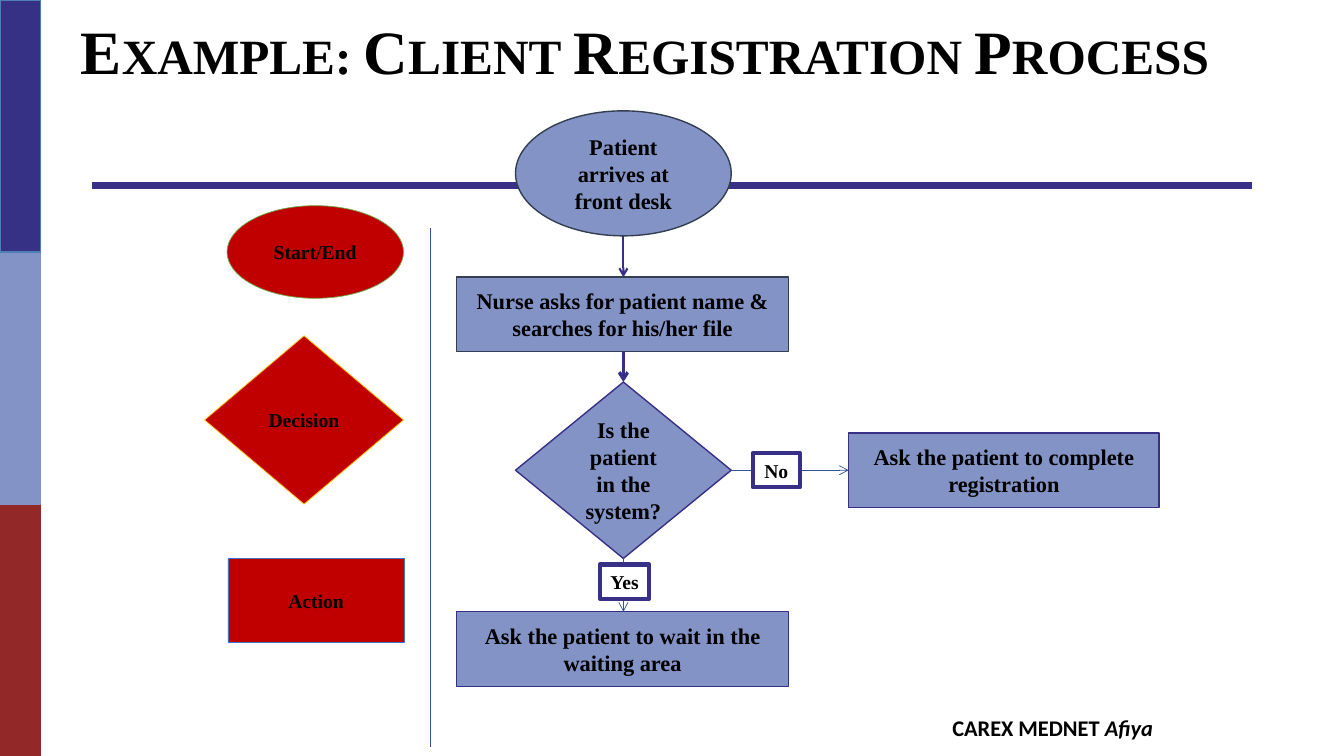
from collections import namedtuple
from dataclasses import dataclass

import pptx
import pptx.dml.color
import pptx.enum.shapes
import pptx.enum.text
import pptx.oxml
import pptx.oxml.ns
import pptx.util

Pt = pptx.util.Pt
Shape = pptx.enum.shapes.MSO_SHAPE
Align = pptx.enum.text.PP_ALIGN
Anchor = pptx.enum.text.MSO_ANCHOR
Box = namedtuple("Box", "left top width height")


@dataclass(frozen=True)
class Theme:
    serif: str = "Times New Roman"
    sans: str = "Calibri"
    title_size: int = 44
    step_size: int = 16
    label_size: int = 14
    text: str = "000000"
    paper: str = "FFFFFF"
    indigo: str = "383087"
    band_indigo: str = "373185"
    band_edge: str = "4E7FB4"
    periwinkle: str = "8393C5"
    brick: str = "932828"
    red: str = "C00000"
    slate: str = "333F50"
    blue: str = "2F5597"
    green: str = "70AD47"
    gold: str = "FFC000"
    azure: str = "4472C4"


THEME = Theme()


def rgb(value):
    return pptx.dml.color.RGBColor.from_string(value)


def style_font(font, size, name=THEME.serif):
    font.name = name
    font.size = Pt(size)
    font.bold = True
    font.color.rgb = rgb(THEME.text)


def add_block(slide, kind, box, fill, edge, weight, text="", size=THEME.step_size):
    block = slide.shapes.add_shape(kind, *map(Pt, box))
    block.shadow.inherit = False
    block.fill.solid()
    block.fill.fore_color.rgb = rgb(fill)
    block.line.color.rgb = rgb(edge)
    block.line.width = Pt(weight)
    if text:
        frame = block.text_frame
        frame.word_wrap = True
        frame.vertical_anchor = Anchor.MIDDLE
        paragraph = frame.paragraphs[0]
        paragraph.text = text
        paragraph.alignment = Align.CENTER
        style_font(paragraph.font, size)
    return block


def add_line(slide, start, end, color, weight, arrow=False):
    line = slide.shapes.add_connector(
        pptx.enum.shapes.MSO_CONNECTOR.STRAIGHT, *map(Pt, (*start, *end)))
    line.line.color.rgb = rgb(color)
    line.line.width = Pt(weight)
    properties = line._element.spPr
    if arrow:
        tail = pptx.oxml.parse_xml(
            f'<a:tailEnd {pptx.oxml.ns.nsdecls("a")} type="arrow"/>')
        properties.find(pptx.oxml.ns.qn("a:ln")).append(tail)
    properties.append(pptx.oxml.parse_xml(
        f'<a:effectLst {pptx.oxml.ns.nsdecls("a")}/>'))


def side_band(slide, box):
    height = box.height / 3
    bands = [(THEME.band_indigo, THEME.band_edge),
             (THEME.periwinkle, THEME.periwinkle),
             (THEME.brick, THEME.brick)]
    for index, (fill, edge) in reversed(list(enumerate(bands))):
        band = Box(box.left, box.top + index * height, box.width, height)
        add_block(slide, Shape.RECTANGLE, band, fill, edge, 1)


def heading(slide, box):
    title = slide.shapes.title
    title.left, title.top, title.width, title.height = map(Pt, box)
    frame = title.text_frame
    frame.word_wrap = True
    frame.auto_size = pptx.enum.text.MSO_AUTO_SIZE.NONE
    frame.vertical_anchor = Anchor.MIDDLE
    paragraph = frame.paragraphs[0]
    paragraph.text = "Example: Client Registration Process"
    paragraph.alignment = Align.LEFT
    paragraph.line_spacing = 0.9
    style_font(paragraph.font, THEME.title_size)
    paragraph.font._element.set("cap", "small")
    rule_y = box.top + 133.2
    add_line(slide, (box.left + 15, rule_y), (box.left + 844, rule_y),
             THEME.indigo, 4.5)


def footer(slide, box):
    frame = slide.shapes.add_textbox(*map(Pt, box)).text_frame
    frame.word_wrap = True
    paragraph = frame.paragraphs[0]
    style_font(paragraph.font, THEME.step_size, THEME.sans)
    paragraph.add_run().text = "CAREX MEDNET "
    program = paragraph.add_run()
    program.text = "Afiya"
    program.font.italic = True


def legend(slide, box):
    symbols = [("Start/End", Shape.OVAL, 16, 0, 126, 66.2, THEME.green),
               ("Decision", Shape.DIAMOND, 0, 93, 142, 120.2, THEME.gold),
               ("Action", Shape.RECTANGLE, 16.6, 252, 126, 59.8, THEME.azure)]
    for text, kind, dx, dy, width, height, edge in symbols:
        symbol = Box(box.left + dx, box.top + dy, width, height)
        add_block(slide, kind, symbol, THEME.red, edge, 0.5, text, THEME.label_size)
    divider_x = box.left + box.width
    add_line(slide, (divider_x, box.top + 15.8),
             (divider_x, box.top + box.height), THEME.blue, 1)


def answer(slide, box, text):
    tag = add_block(slide, Shape.RECTANGLE, box, THEME.paper, THEME.indigo, 3,
                    text, THEME.label_size)
    tag.text_frame.word_wrap = False


def flow(slide, box):
    step_width, step_height = 237, 53.3
    node_width = 154.1
    axis = box.left + step_width / 2 + 0.6
    node_left = axis - node_width / 2

    arrival = Box(node_left, box.top, node_width, 89.3)
    search = Box(box.left, box.top + 118.8, step_width, step_height)
    question = Box(node_left, box.top + 193.7, node_width, 126)
    middle = question.top + question.height / 2
    register = Box(box.left + box.width - 221.8, middle - step_height / 2,
                   221.8, step_height)
    wait = Box(box.left, box.top + box.height - step_height, step_width, step_height)

    steps = [
        (Shape.OVAL, arrival, THEME.slate, "Patient arrives at front desk"),
        (Shape.RECTANGLE, search, THEME.slate,
         "Nurse asks for patient name & searches for his/her file"),
        (Shape.DIAMOND, question, THEME.indigo, "Is the patient in the system?"),
        (Shape.RECTANGLE, register, THEME.indigo,
         "Ask the patient to complete registration"),
        (Shape.RECTANGLE, wait, THEME.indigo,
         "Ask the patient to wait in the waiting area"),
    ]
    for kind, place, edge, text in steps:
        add_block(slide, kind, place, THEME.periwinkle, edge, 1, text)

    for upper, lower, color, weight in [(arrival, search, THEME.indigo, 1.5),
                                        (search, question, THEME.indigo, 2.25),
                                        (question, wait, THEME.blue, 0.5)]:
        add_line(slide, (axis, upper.top + upper.height), (axis, lower.top),
                 color, weight, arrow=True)
    add_line(slide, (node_left + node_width, middle), (register.left, middle),
             THEME.blue, 0.5, arrow=True)

    answer(slide, Box(axis - 16.8, question.top + question.height + 4.3, 35.3, 24.5),
           "Yes")
    answer(slide, Box(node_left + node_width + 15.3, middle - 12.2, 33.8, 24.5), "No")


def main():
    deck = pptx.Presentation()
    deck.slide_width, deck.slide_height = Pt(960), Pt(540)
    slide = deck.slides.add_slide(deck.slide_layouts[5])
    side_band(slide, Box(0, 0, 28.8, 540))
    heading(slide, Box(50.4, -0.7, 841.7, 79.2))
    footer(slide, Box(673.2, 506.9, 275.8, 25.9))
    legend(slide, Box(146.2, 146.9, 161.2, 386.6))
    flow(slide, Box(326.2, 79.2, 501.8, 411.1))
    deck.save("out.pptx")


if __name__ == "__main__":
    main()
